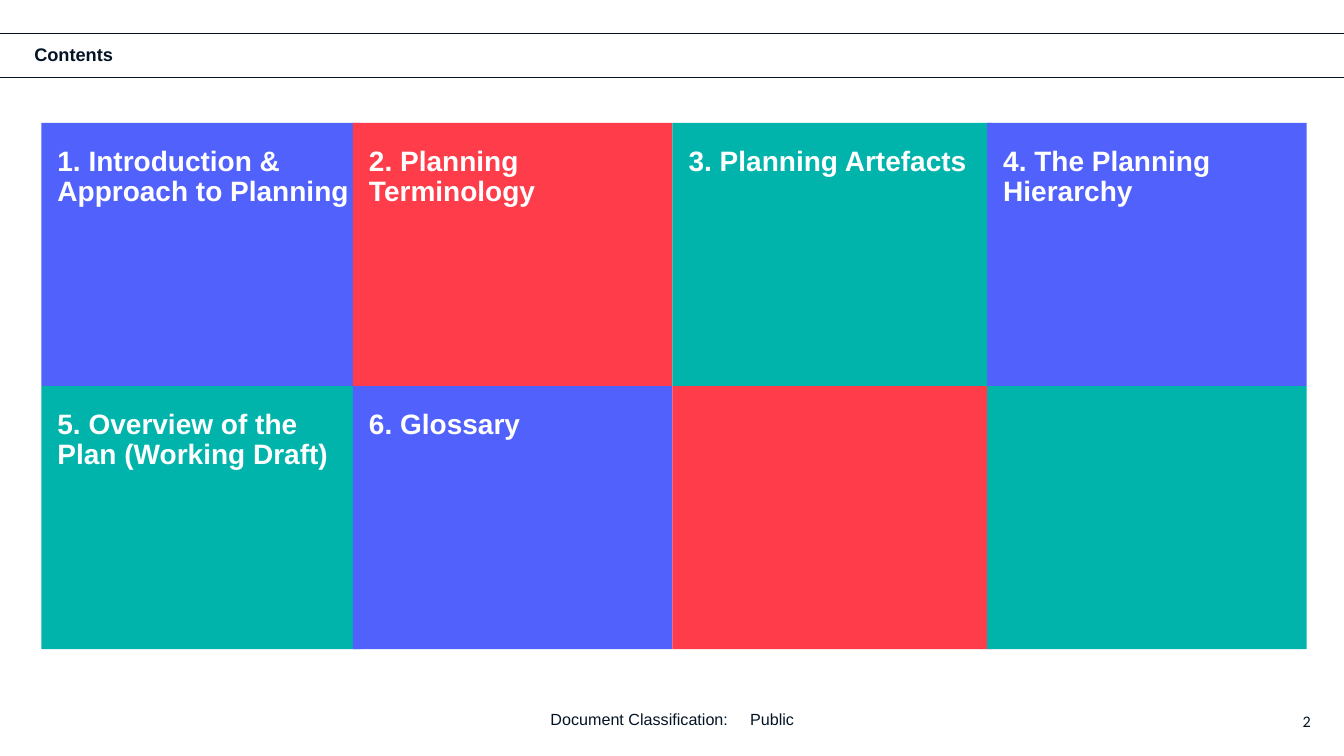
import dataclasses
import lxml.etree
import pptx
import pptx.dml.color
import pptx.enum.shapes
import pptx.enum.text
import pptx.oxml.ns
import pptx.util

Inches = pptx.util.Inches
Color = pptx.dml.color.RGBColor.from_string
Align = pptx.enum.text.PP_ALIGN
Anchor = pptx.enum.text.MSO_ANCHOR


@dataclasses.dataclass(frozen=True)
class Theme:
    """Colours, fonts and type sizes of the slide."""
    ink: str = "041425"
    white: str = "FFFFFF"
    blue: str = "5161FC"
    red: str = "FF3C49"
    teal: str = "00B4AC"
    sans: str = "Arial"
    digit: str = "Calibri"
    title: float = 13
    tile: float = 20
    foot: float = 11.5
    rule: float = 0.5


THEME = Theme()
TILES = [
    [("1. Introduction & Approach to Planning", THEME.blue),
     ("2. Planning Terminology", THEME.red),
     ("3. Planning Artefacts", THEME.teal),
     ("4. The Planning Hierarchy", THEME.blue)],
    [("5. Overview of the Plan (Working Draft)", THEME.teal),
     ("6. Glossary", THEME.blue),
     ("", THEME.red),
     ("", THEME.teal)],
]


def assign(item, values):
    """Set each named attribute of an item."""
    for name, value in values.items():
        setattr(item, name, value)


def write(shape, text, size, color=THEME.ink, face=THEME.sans, bold=False,
          align=Align.LEFT, anchor=Anchor.MIDDLE, pads=(0, 0, 0, 0), space=1):
    """Write one styled paragraph into a shape and return it."""
    frame = shape.text_frame
    sides = ("margin_left", "margin_top", "margin_right", "margin_bottom")
    assign(frame, dict(zip(sides, map(Inches, pads))))
    assign(frame, {"word_wrap": True, "vertical_anchor": anchor})
    para = frame.paragraphs[0]
    assign(para, {"alignment": align, "line_spacing": space})
    run = para.add_run()
    run.text = text
    assign(run.font, {"name": face, "size": pptx.util.Pt(size), "bold": bold})
    run.font.color.rgb = Color(color)
    return para


def label(slide, box, text, size, **style):
    """Add a text box and return its paragraph."""
    shape = slide.shapes.add_textbox(*map(Inches, box))
    return write(shape, text, size, **style)


def header(slide, box):
    """Draw the title between two full-width rules."""
    left, top, width, height = box
    for y in (top, top + height):
        rule = slide.shapes.add_connector(
            pptx.enum.shapes.MSO_CONNECTOR.STRAIGHT,
            Inches(left), Inches(y), Inches(left + width), Inches(y))
        rule.line.color.rgb = Color(THEME.ink)
        rule.line.width = pptx.util.Pt(THEME.rule)
        props = rule._element.spPr
        lxml.etree.SubElement(props, pptx.oxml.ns.qn("a:effectLst"))
    label(slide, (left + 0.34, top + 0.11, 3.96, height - 0.21), "Contents",
          THEME.title, bold=True, space=0.9)


def grid(slide, box):
    """Fill the box with two rows of coloured tiles."""
    left, top, width, height = box
    step = height / len(TILES)
    wide = 3.17
    starts = (0, 3.09, 6.26, width - wide)
    for row, tiles in enumerate(TILES):
        for start, (text, color) in zip(starts, tiles):
            tile = slide.shapes.add_shape(
                pptx.enum.shapes.MSO_SHAPE.RECTANGLE, Inches(left + start),
                Inches(top + row * step), Inches(wide), Inches(step))
            tile.shadow.inherit = False
            tile.fill.solid()
            tile.fill.fore_color.rgb = Color(color)
            tile.line.fill.background()
            if text:
                write(tile, text, THEME.tile, THEME.white, bold=True,
                      anchor=Anchor.TOP, pads=(0.16, 0.24, 0.1, 0.05),
                      space=0.9)


def footer(slide, box):
    """Place the classification and the page number."""
    left, top, width, height = box
    para = label(slide, (left, top, 4.5, height),
                 "Document Classification:\tPublic", THEME.foot,
                 pads=(1.04, 0.05, 0.1, 0.05))
    qn = pptx.oxml.ns.qn
    tabs = lxml.etree.SubElement(para._p.get_or_add_pPr(), qn("a:tabLst"))
    lxml.etree.SubElement(tabs, qn("a:tab"), pos=str(Inches(1.98)), algn="l")
    label(slide, (left + width - 3.58, top + 0.02, 3.58, height), "2",
          THEME.foot, face=THEME.digit, align=Align.RIGHT)


def main():
    """Build and save the contents slide."""
    deck = pptx.Presentation()
    assign(deck, {"slide_width": Inches(13.33), "slide_height": Inches(7.5)})
    slide = deck.slides.add_slide(deck.slide_layouts[6])
    header(slide, (0, 0.33, 13.33, 0.44))
    grid(slide, (0.41, 1.22, 12.55, 5.22))
    footer(slide, (4.42, 6.93, 8.58, 0.4))
    deck.save("out.pptx")


if __name__ == "__main__":
    main()
